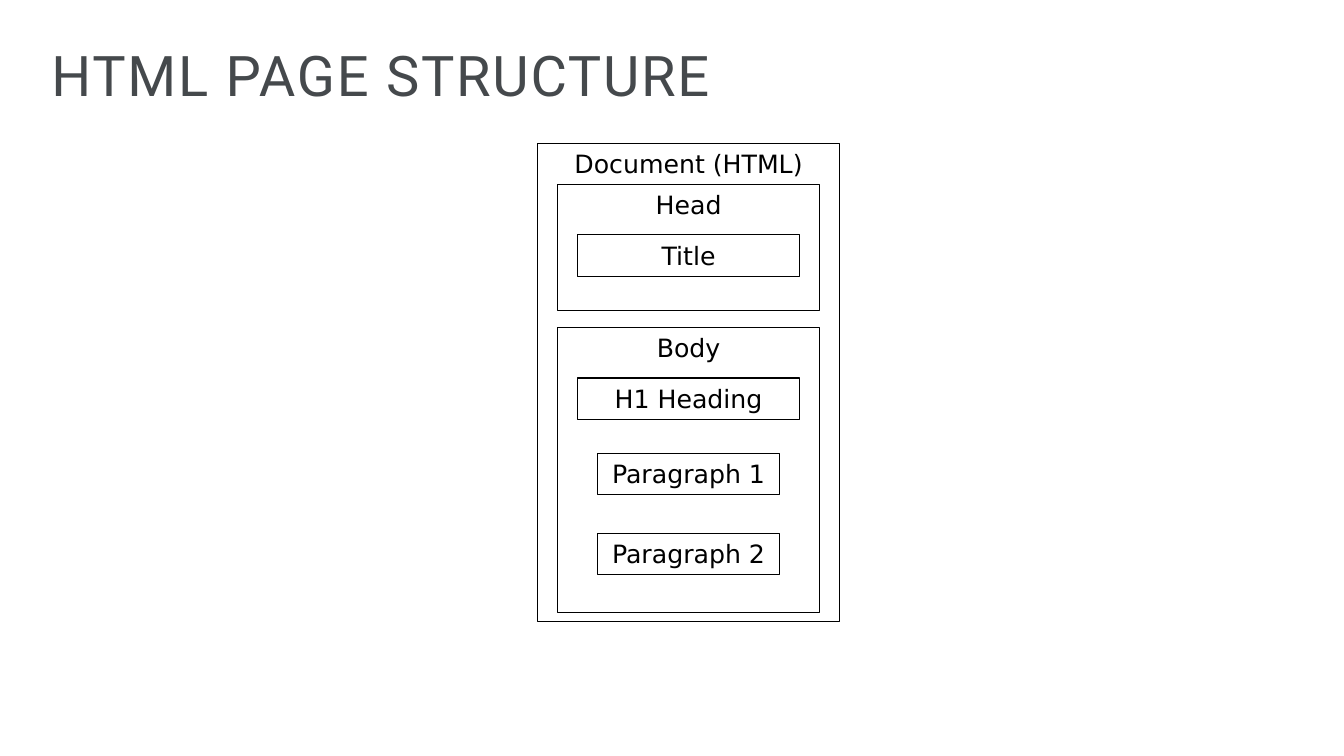
from dataclasses import dataclass

from pptx import Presentation
from pptx.dml.color import RGBColor
from pptx.enum.shapes import MSO_SHAPE
from pptx.enum.text import MSO_ANCHOR, PP_ALIGN
from pptx.util import Inches, Pt


@dataclass(frozen=True)
class Theme:
    title_font: str = "Roboto"
    label_font: str = "DejaVu Sans"
    title_size: float = 40
    label_size: float = 18
    title_ink: str = "45494C"
    ink: str = "000000"
    paper: str = "FFFFFF"
    line: float = 0.75


THEME = Theme()

# The nested boxes share one centre; each level is narrower by one step
CENTRE = 6.83
WIDTH = 3.0
STEP = 0.4
ROW = 0.41

# Label, nesting level, top, height
BOXES = [
    ("Document (HTML)", 0, 1.42, 4.75),
    ("Head", 1, 1.83, 1.25),
    ("Body", 1, 3.25, 2.83),
    ("H1 Heading", 2, 3.75, ROW),
    ("Paragraph 1", 3, 4.5, ROW),
    ("Paragraph 2", 3, 5.29, ROW),
    ("Title", 2, 2.33, ROW),
]


def style(run, font, size, ink):
    run.font.name = font
    run.font.size = Pt(size)
    run.font.color.rgb = RGBColor.from_string(ink)


def add_title(slide, text):
    box = slide.shapes.add_textbox(
        Inches(0.44), Inches(0.3), Inches(12.44), Inches(1.25))
    frame = box.text_frame
    frame.word_wrap = True
    frame.vertical_anchor = MSO_ANCHOR.TOP
    frame.margin_left = Inches(0.07)
    frame.margin_top = Inches(0.1)
    frame.text = text
    run = frame.paragraphs[0].runs[0]
    style(run, THEME.title_font, THEME.title_size, THEME.title_ink)
    # Letter spacing, in hundredths of a point
    run.font._element.set("spc", "130")


def add_box(group, label, level, top, height):
    width = WIDTH - STEP * level
    box = group.shapes.add_shape(
        MSO_SHAPE.RECTANGLE, Inches(CENTRE - width / 2), Inches(top),
        Inches(width), Inches(height))
    box.shadow.inherit = False
    box.fill.solid()
    box.fill.fore_color.rgb = RGBColor.from_string(THEME.paper)
    box.line.color.rgb = RGBColor.from_string(THEME.ink)
    box.line.width = Pt(THEME.line)
    frame = box.text_frame
    frame.word_wrap = True
    frame.vertical_anchor = MSO_ANCHOR.TOP
    frame.text = label
    line = frame.paragraphs[0]
    line.alignment = PP_ALIGN.CENTER
    style(line.runs[0], THEME.label_font, THEME.label_size, THEME.ink)


def main():
    deck = Presentation()
    deck.slide_width = Inches(13.33)
    deck.slide_height = Inches(7.5)
    slide = deck.slides.add_slide(deck.slide_layouts[6])

    # Heading
    add_title(slide, "HTML PAGE STRUCTURE")

    # Page diagram, from back to front
    group = slide.shapes.add_group_shape()
    for box in BOXES:
        add_box(group, *box)

    deck.save("out.pptx")


if __name__ == "__main__":
    main()
